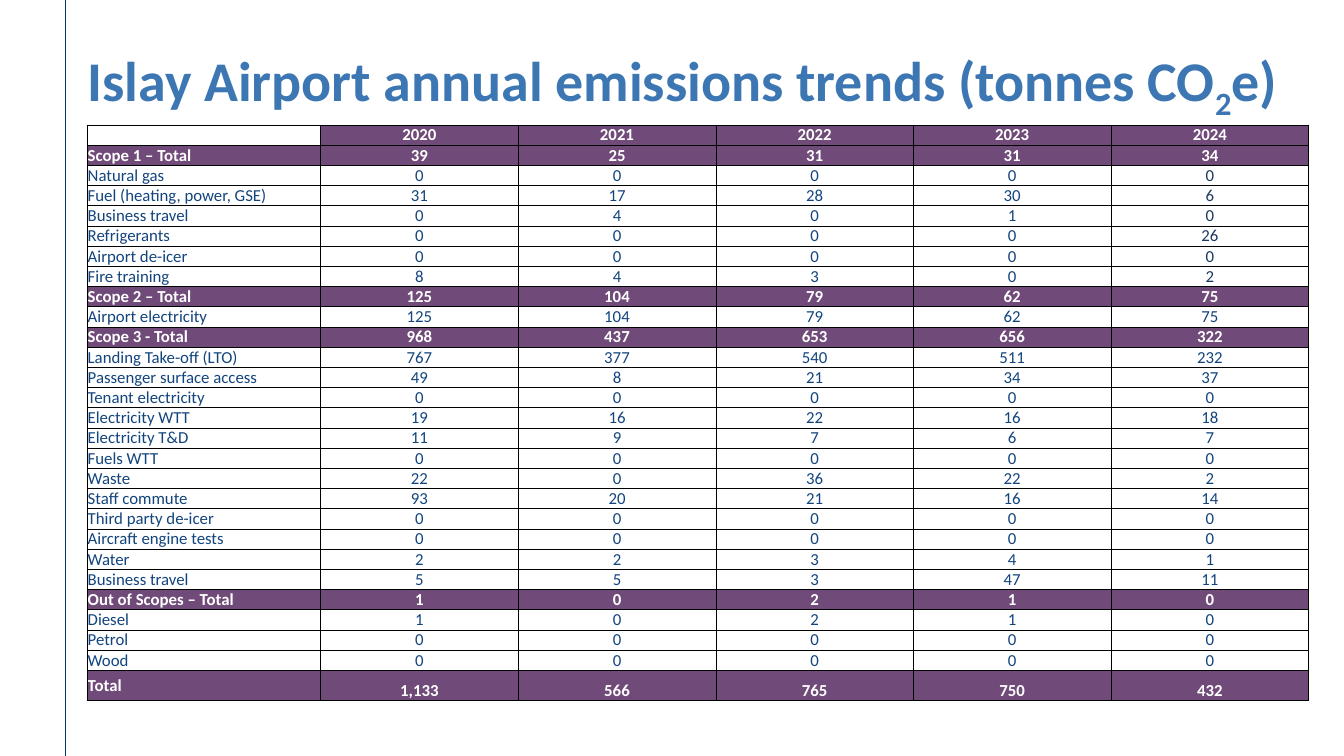
from dataclasses import dataclass

from lxml import etree
from pptx import Presentation
from pptx.dml.color import RGBColor
from pptx.enum.shapes import MSO_CONNECTOR
from pptx.enum.text import MSO_ANCHOR, PP_ALIGN
from pptx.oxml.ns import qn
from pptx.slide import Slide
from pptx.table import _Cell
from pptx.util import Inches, Pt

STRAIGHT = MSO_CONNECTOR.STRAIGHT
TOP, MIDDLE, BOTTOM = MSO_ANCHOR.TOP, MSO_ANCHOR.MIDDLE, MSO_ANCHOR.BOTTOM
LEFT, CENTER = PP_ALIGN.LEFT, PP_ALIGN.CENTER


@dataclass(frozen=True)
class Theme:
    font: str = "Calibri"
    title: str = "3C77B3"
    rule: str = "023671"
    band: str = "704A79"
    band_text: str = "FFFFFF"
    body_text: str = "12447D"
    latest_text: str = "183860"
    border: str = "000000"
    title_size: int = 40
    table_size: int = 12
    rule_width: float = 1
    border_width: float = 0.5


@dataclass(frozen=True)
class Emission:
    source: str
    tonnes: tuple[int, ...]
    is_total: bool = False


THEME = Theme()
YEARS = ("2020", "2021", "2022", "2023", "2024")
EMISSIONS = (
    Emission("Scope 1 – Total", (39, 25, 31, 31, 34), True),
    Emission("Natural gas", (0, 0, 0, 0, 0)),
    Emission("Fuel (heating, power, GSE)", (31, 17, 28, 30, 6)),
    Emission("Business travel", (0, 4, 0, 1, 0)),
    Emission("Refrigerants", (0, 0, 0, 0, 26)),
    Emission("Airport de-icer", (0, 0, 0, 0, 0)),
    Emission("Fire training", (8, 4, 3, 0, 2)),
    Emission("Scope 2 – Total", (125, 104, 79, 62, 75), True),
    Emission("Airport electricity", (125, 104, 79, 62, 75)),
    Emission("Scope 3 - Total", (968, 437, 653, 656, 322), True),
    Emission("Landing Take-off (LTO)", (767, 377, 540, 511, 232)),
    Emission("Passenger surface access", (49, 8, 21, 34, 37)),
    Emission("Tenant electricity", (0, 0, 0, 0, 0)),
    Emission("Electricity WTT", (19, 16, 22, 16, 18)),
    Emission("Electricity T&D", (11, 9, 7, 6, 7)),
    Emission("Fuels WTT", (0, 0, 0, 0, 0)),
    Emission("Waste", (22, 0, 36, 22, 2)),
    Emission("Staff commute", (93, 20, 21, 16, 14)),
    Emission("Third party de-icer", (0, 0, 0, 0, 0)),
    Emission("Aircraft engine tests", (0, 0, 0, 0, 0)),
    Emission("Water", (2, 2, 3, 4, 1)),
    Emission("Business travel", (5, 5, 3, 47, 11)),
    Emission("Out of Scopes – Total", (1, 0, 2, 1, 0), True),
    Emission("Diesel", (1, 0, 2, 1, 0)),
    Emission("Petrol", (0, 0, 0, 0, 0)),
    Emission("Wood", (0, 0, 0, 0, 0)),
    Emission("Total", (1133, 566, 765, 750, 432), True),
)
SCOPE_2_START = 7
SOURCE_WIDTH, YEAR_WIDTH = 2.31, 1.96
ROW_HEIGHT, GRAND_TOTAL_HEIGHT = 0.2, 0.3


def add_margin_rule(slide: Slide) -> None:
    rule = slide.shapes.add_connector(
        STRAIGHT, Inches(0.65), Inches(0), Inches(0.65), Inches(7.5)
    )
    rule.line.color.rgb = RGBColor.from_string(THEME.rule)
    rule.line.width = Pt(THEME.rule_width)
    etree.SubElement(rule._element.spPr, qn("a:effectLst"))


def add_title(slide: Slide) -> None:
    box = slide.shapes.add_textbox(Inches(0.87), Inches(0.46), Inches(12.26), Inches(1.06))
    frame = box.text_frame
    frame.word_wrap = True
    frame.vertical_anchor = TOP
    frame.margin_left = frame.margin_right = frame.margin_top = frame.margin_bottom = 0
    heading = frame.paragraphs[0]
    heading.line_spacing = 0.9
    for wording in ("Islay Airport annual emissions trends (tonnes CO", "2", "e)"):
        run = heading.add_run()
        run.text = wording
        run.font.name = THEME.font
        run.font.size = Pt(THEME.title_size)
        run.font.bold = True
        run.font.color.rgb = RGBColor.from_string(THEME.title)
    subscript = heading.runs[1].font._element
    subscript.set("baseline", "-25000")


def add_borders(cell: _Cell) -> None:
    properties = cell._tc.get_or_add_tcPr()
    for side in ("a:lnL", "a:lnR", "a:lnT", "a:lnB"):
        border = etree.SubElement(properties, qn(side), w=str(Pt(THEME.border_width)))
        fill = etree.SubElement(border, qn("a:solidFill"))
        etree.SubElement(fill, qn("a:srgbClr"), val=THEME.border)


def fill_cell(
    cell: _Cell, wording: str, color: str, banded: bool, align: PP_ALIGN, anchor: MSO_ANCHOR
) -> None:
    add_borders(cell)
    cell.margin_left = cell.margin_right = cell.margin_top = cell.margin_bottom = 0
    cell.vertical_anchor = anchor
    if banded:
        cell.fill.solid()
        cell.fill.fore_color.rgb = RGBColor.from_string(THEME.band)
    else:
        cell.fill.background()
    paragraph = cell.text_frame.paragraphs[0]
    paragraph.text = wording
    paragraph.alignment = align
    for run in paragraph.runs:
        run.font.name = THEME.font
        run.font.size = Pt(THEME.table_size)
        run.font.bold = banded
        run.font.color.rgb = RGBColor.from_string(color)
    if not wording:
        size = str(THEME.table_size * 100)
        etree.SubElement(paragraph._p, qn("a:endParaRPr"), sz=size)


def add_emissions_table(slide: Slide) -> None:
    row_count = len(EMISSIONS) + 1
    width = SOURCE_WIDTH + YEAR_WIDTH * len(YEARS)
    height = ROW_HEIGHT * len(EMISSIONS) + GRAND_TOTAL_HEIGHT
    table = slide.shapes.add_table(
        row_count, len(YEARS) + 1, Inches(0.87), Inches(1.24), Inches(width), Inches(height)
    ).table
    table.first_row = False
    table.horz_banding = False
    for index, column in enumerate(table.columns):
        column.width = Inches(YEAR_WIDTH if index else SOURCE_WIDTH)
    for row in table.rows:
        row.height = Inches(ROW_HEIGHT)
    table.rows[row_count - 1].height = Inches(GRAND_TOTAL_HEIGHT)

    fill_cell(table.cell(0, 0), "", THEME.body_text, False, LEFT, MIDDLE)
    for column, year in enumerate(YEARS, 1):
        fill_cell(table.cell(0, column), year, THEME.band_text, True, CENTER, MIDDLE)
    for row, emission in enumerate(EMISSIONS, 1):
        banded = emission.is_total
        color = THEME.band_text if banded else THEME.body_text
        fill_cell(table.cell(row, 0), emission.source, color, banded, LEFT, MIDDLE)
        for column, tonnes in enumerate(emission.tonnes, 1):
            is_latest_scope_1 = column == len(YEARS) and row <= SCOPE_2_START
            value_color = THEME.latest_text if is_latest_scope_1 and not banded else color
            fill_cell(table.cell(row, column), f"{tonnes:,}", value_color, banded, CENTER, BOTTOM)


def main() -> None:
    presentation = Presentation()
    presentation.slide_width = Inches(13.33)
    presentation.slide_height = Inches(7.5)
    slide = presentation.slides.add_slide(presentation.slide_layouts[6])
    add_margin_rule(slide)
    add_title(slide)
    add_emissions_table(slide)
    presentation.save("out.pptx")


if __name__ == "__main__":
    main()
